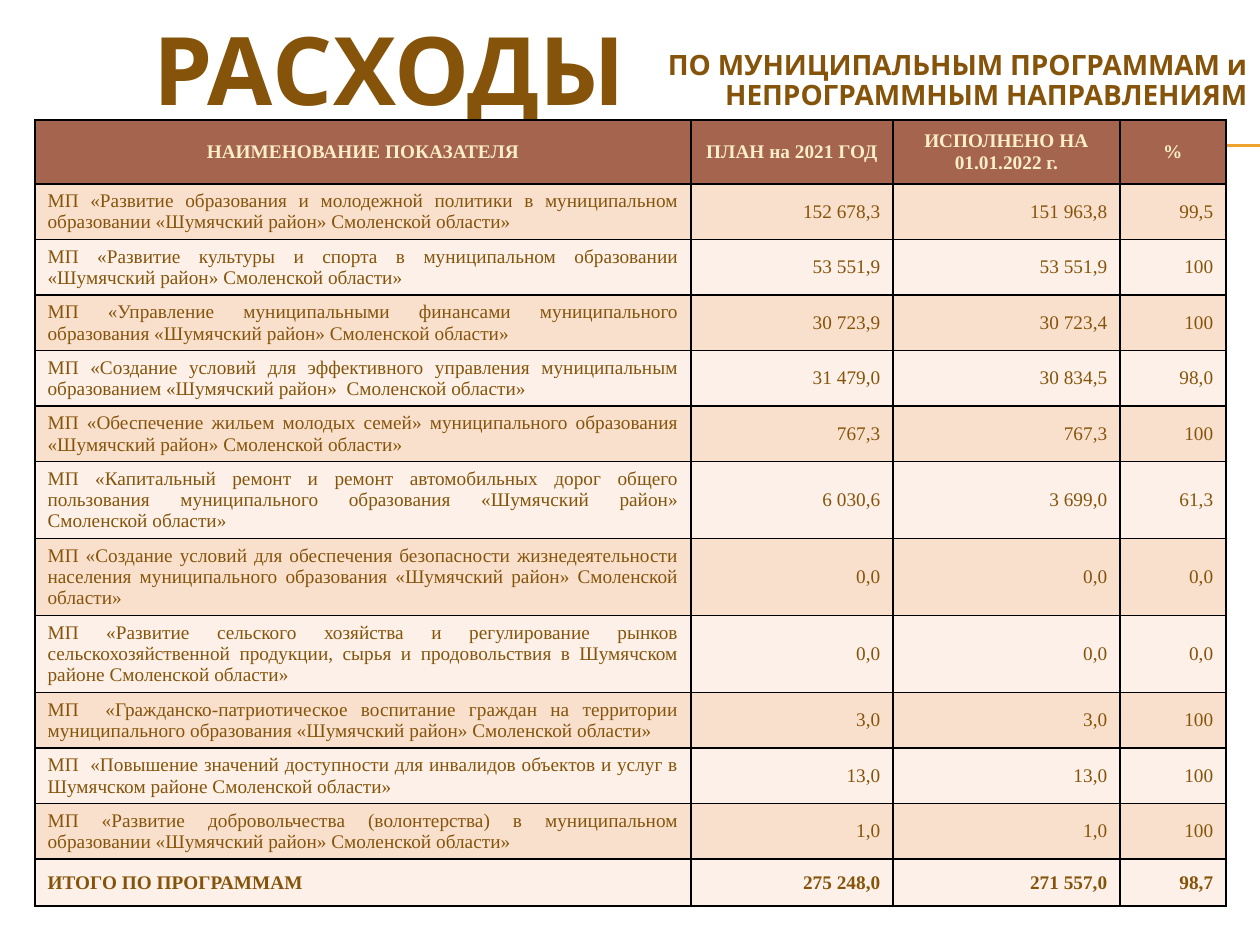
from lxml import etree
from pptx import Presentation
from pptx.dml.color import RGBColor
from pptx.enum.shapes import MSO_CONNECTOR
from pptx.enum.text import MSO_ANCHOR, MSO_AUTO_SIZE, PP_ALIGN
from pptx.oxml.ns import qn
from pptx.util import Pt

PX = 914400 // 126
LEFT, CENTER, RIGHT, JUSTIFY = PP_ALIGN.LEFT, PP_ALIGN.CENTER, PP_ALIGN.RIGHT, PP_ALIGN.JUSTIFY
MIDDLE = MSO_ANCHOR.MIDDLE
COLORS = {
    "text": "85540A", "rule": "F0A22E", "border": "000000",
    "header": "A5644E", "header_text": "FBEEC9",
    "odd": "F9E0CD", "even": "FCF0E8",
}
HEADER = ["НАИМЕНОВАНИЕ ПОКАЗАТЕЛЯ", "ПЛАН на 2021 ГОД", "ИСПОЛНЕНО НА 01.01.2022 г.", "%"]
PROGRAMS = [
    ["МП «Развитие образования и молодежной политики в муниципальном образовании «Шумячский район» Смоленской области»",
     "152 678,3", "151 963,8", "99,5"],
    ["МП «Развитие культуры и спорта в муниципальном образовании «Шумячский район» Смоленской области»",
     "53 551,9", "53 551,9", "100"],
    ["МП «Управление муниципальными финансами муниципального образования «Шумячский район» Смоленской области»",
     "30 723,9", "30 723,4", "100"],
    ["МП «Создание условий для эффективного управления муниципальным образованием «Шумячский район»  Смоленской области»",
     "31 479,0", "30 834,5", "98,0"],
    ["МП «Обеспечение жильем молодых семей» муниципального образования «Шумячский район» Смоленской области»",
     "767,3", "767,3", "100"],
    ["МП «Капитальный ремонт и ремонт автомобильных дорог общего пользования муниципального образования "
     "«Шумячский район» Смоленской области»",
     "6 030,6", "3 699,0", "61,3"],
    ["МП «Создание условий для обеспечения безопасности жизнедеятельности населения муниципального образования "
     "«Шумячский район» Смоленской области»",
     "0,0", "0,0", "0,0"],
    ["МП «Развитие сельского хозяйства и регулирование рынков сельскохозяйственной продукции, сырья и "
     "продовольствия в Шумячском районе Смоленской области»",
     "0,0", "0,0", "0,0"],
    ["МП  «Гражданско-патриотическое воспитание граждан на территории муниципального образования "
     "«Шумячский район» Смоленской области»",
     "3,0", "3,0", "100"],
    ["МП  «Повышение значений доступности для инвалидов объектов и услуг в Шумячском районе Смоленской области»",
     "13,0", "13,0", "100"],
    ["МП «Развитие добровольчества (волонтерства) в муниципальном образовании «Шумячский район» Смоленской области»",
     "1,0", "1,0", "100"],
]
TOTAL = ["ИТОГО ПО ПРОГРАММАМ", "275 248,0", "271 557,0", "98,7"]
COL_WIDTHS = [656, 202, 227, 106]
ROW_HEIGHTS = [64] + [55] * 5 + [77] * 3 + [55] * 3 + [47]


def style(p, align, font, size, color, bold):
    p.alignment = align
    p.font.name = font
    p.font.size = Pt(size)
    p.font.bold = bold
    p.font.color.rgb = RGBColor.from_string(COLORS[color])


def add_borders(cell):
    tc_pr = cell._tc.get_or_add_tcPr()
    for i, side in enumerate(("a:lnL", "a:lnR", "a:lnT", "a:lnB")):
        ln = etree.Element(qn(side), w=str(Pt(1)))
        fill = etree.SubElement(ln, qn("a:solidFill"))
        etree.SubElement(fill, qn("a:srgbClr"), val=COLORS["border"])
        tc_pr.insert(i, ln)


prs = Presentation()
prs.slide_width, prs.slide_height = 1260 * PX, 945 * PX
s = prs.slides.add_slide(prs.slide_layouts[5])

# Double rule behind the table
for y in (145, 146):
    line = s.shapes.add_connector(MSO_CONNECTOR.STRAIGHT, 71 * PX, y * PX, 1260 * PX, y * PX)
    line.line.color.rgb = RGBColor.from_string(COLORS["rule"])
    line.line.width = Pt(0.75)
    etree.SubElement(line._element.spPr, qn("a:effectLst"))

# Title
title = s.shapes.title
title.left, title.top, title.width, title.height = 0, 20 * PX, 779 * PX, 96 * PX
tf = title.text_frame
tf.text = "РАСХОДЫ"
tf.auto_size = MSO_AUTO_SIZE.NONE
tf.vertical_anchor = MIDDLE
style(tf.paragraphs[0], CENTER, "Karla", 54, "text", True)

# Table of programmes
rows = [HEADER, *PROGRAMS, TOTAL]
table = s.shapes.add_table(len(rows), len(HEADER), 35 * PX, 120 * PX,
                           sum(COL_WIDTHS) * PX, sum(ROW_HEIGHTS) * PX).table
for col, width in zip(table.columns, COL_WIDTHS):
    col.width = width * PX
for r, (values, height) in enumerate(zip(rows, ROW_HEIGHTS)):
    table.rows[r].height = height * PX
    is_header, is_total = r == 0, r == len(rows) - 1
    fill = "header" if is_header else "odd" if r % 2 else "even"
    for c, value in enumerate(values):
        cell = table.cell(r, c)
        cell.text = value
        cell.vertical_anchor = MIDDLE
        cell.fill.solid()
        cell.fill.fore_color.rgb = RGBColor.from_string(COLORS[fill])
        add_borders(cell)
        if is_header:
            align = CENTER
        elif c:
            align = RIGHT
        else:
            align = LEFT if is_total else JUSTIFY
        style(cell.text_frame.paragraphs[0], align, "Times New Roman", 11,
              "header_text" if is_header else "text", is_header or is_total)

# Subtitle
subtitle = s.shapes.add_textbox(610 * PX, 45 * PX, 650 * PX, 81 * PX)
tf = subtitle.text_frame
tf.word_wrap = True
tf.text = "ПО МУНИЦИПАЛЬНЫМ ПРОГРАММАМ и НЕПРОГРАММНЫМ НАПРАВЛЕНИЯМ"
p = tf.paragraphs[0]
p.line_spacing = 0.9
style(p, RIGHT, "Karla", 16, "text", True)

prs.save("out.pptx")
